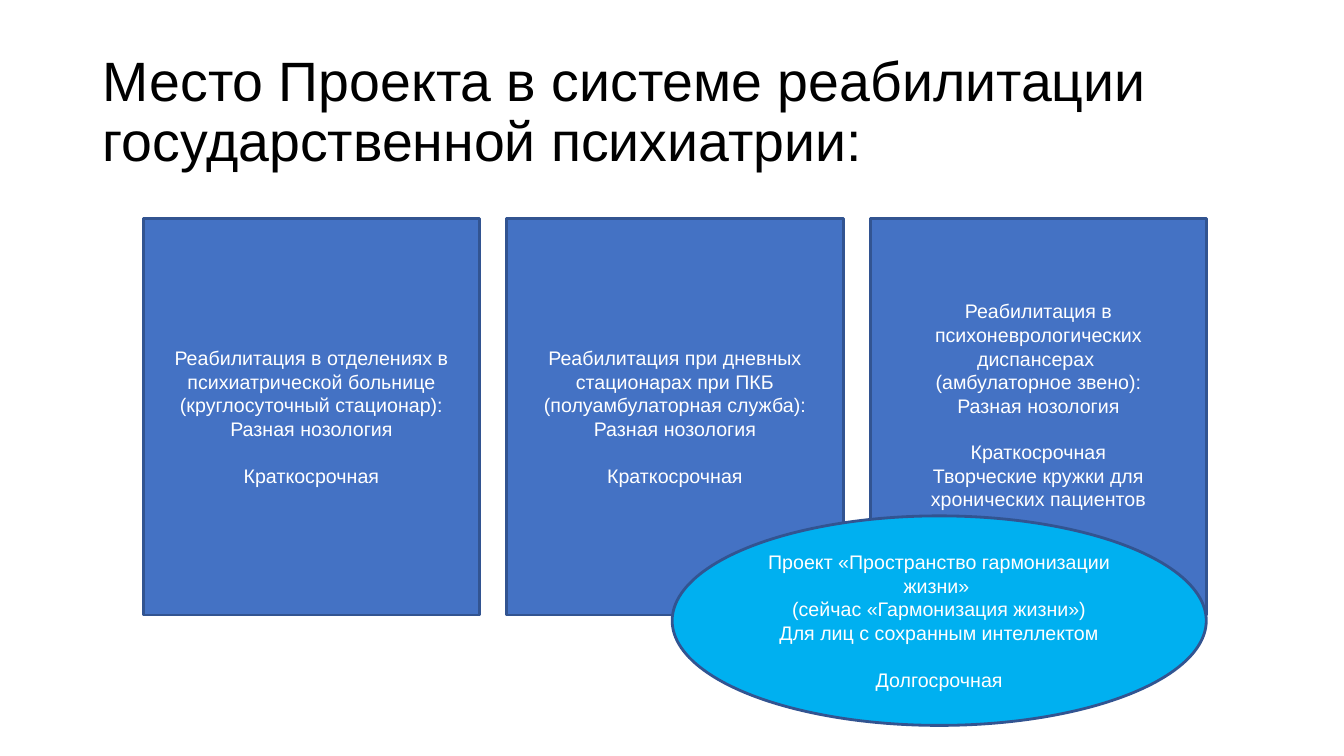
from pptx import Presentation
from pptx.dml.color import RGBColor
from pptx.enum.shapes import MSO_SHAPE
from pptx.enum.text import MSO_ANCHOR, PP_ALIGN
from pptx.util import Cm, Pt

RECT, OVAL = MSO_SHAPE.RECTANGLE, MSO_SHAPE.OVAL
MIDDLE = MSO_ANCHOR.MIDDLE
LEFT, CENTER = PP_ALIGN.LEFT, PP_ALIGN.CENTER

TITLE = "Место Проекта в системе реабилитации государственной психиатрии:"
STAGES = [
    [
        ["Реабилитация в отделениях в психиатрической больнице (круглосуточный стационар):",
         "Разная нозология"],
        ["Краткосрочная"],
    ],
    [
        ["Реабилитация при дневных стационарах при ПКБ (полуамбулаторная служба):",
         "Разная нозология"],
        ["Краткосрочная"],
    ],
    [
        ["Реабилитация в психоневрологических диспансерах ",
         "(амбулаторное звено):",
         "Разная нозология"],
        ["Краткосрочная",
         "Творческие кружки для хронических пациентов"],
    ],
]
PROJECT = [
    ["Проект «Пространство гармонизации жизни» ",
     "(сейчас «Гармонизация жизни»)",
     "Для лиц с сохранным интеллектом"],
    ["Долгосрочная"],
]

THEME = {
    "font": "Arial",
    "ink": RGBColor(0x00, 0x00, 0x00),
    "light": RGBColor(0xFF, 0xFF, 0xFF),
    "stage": RGBColor(0x44, 0x72, 0xC4),
    "project": RGBColor(0x00, 0xB0, 0xF0),
    "edge": RGBColor(0x32, 0x54, 0x91),
    "head": Pt(39.6),
    "body": Pt(14),
    "line": Pt(2),
    "gap": Pt(16.5),
}
TITLE_BOX = (2.34, 1.02, 29.21, 3.68)
STAGE_BOX = (3.61, 5.5, 8.48, 10)
STEP = 9.16
PROJECT_BOX = (16.94, 13, 13.46, 5.28)


def apply(item, values):
    for name, value in values.items():
        setattr(item, name, value)


def write(shape, groups, size, ink, align, leading=1.0):
    frame = shape.text_frame
    apply(frame, {"word_wrap": True, "vertical_anchor": MIDDLE})
    first = True
    for group in groups:
        for index, text in enumerate(group):
            para = frame.paragraphs[0] if first else frame.add_paragraph()
            gap = THEME["gap"] if index == 0 and not first else Pt(0)
            apply(para, {"alignment": align, "line_spacing": leading,
                         "space_before": gap})
            run = para.add_run()
            run.text = text
            apply(run.font, {"name": THEME["font"], "size": size})
            run.font.color.rgb = ink
            first = False


def block(slide, kind, box, fill, groups):
    shape = slide.shapes.add_shape(kind, *map(Cm, box))
    shape.shadow.inherit = False
    shape.fill.solid()
    shape.fill.fore_color.rgb = fill
    shape.line.color.rgb = THEME["edge"]
    shape.line.width = THEME["line"]
    write(shape, groups, THEME["body"], THEME["light"], CENTER)
    return shape


def main():
    deck = Presentation()
    apply(deck, {"slide_width": Cm(33.87), "slide_height": Cm(19.05)})
    slide = deck.slides.add_slide(deck.slide_layouts[6])
    title = slide.shapes.add_textbox(*map(Cm, TITLE_BOX))
    write(title, [[TITLE]], THEME["head"], THEME["ink"], LEFT, 0.9)

    left, top, width, height = STAGE_BOX
    for index, groups in enumerate(STAGES):
        box = (left + index * STEP, top, width, height)
        stage = block(slide, RECT, box, THEME["stage"], groups)
    stage.text_frame.margin_bottom += THEME["gap"]
    block(slide, OVAL, PROJECT_BOX, THEME["project"], PROJECT)
    deck.save("out.pptx")


if __name__ == "__main__":
    main()
